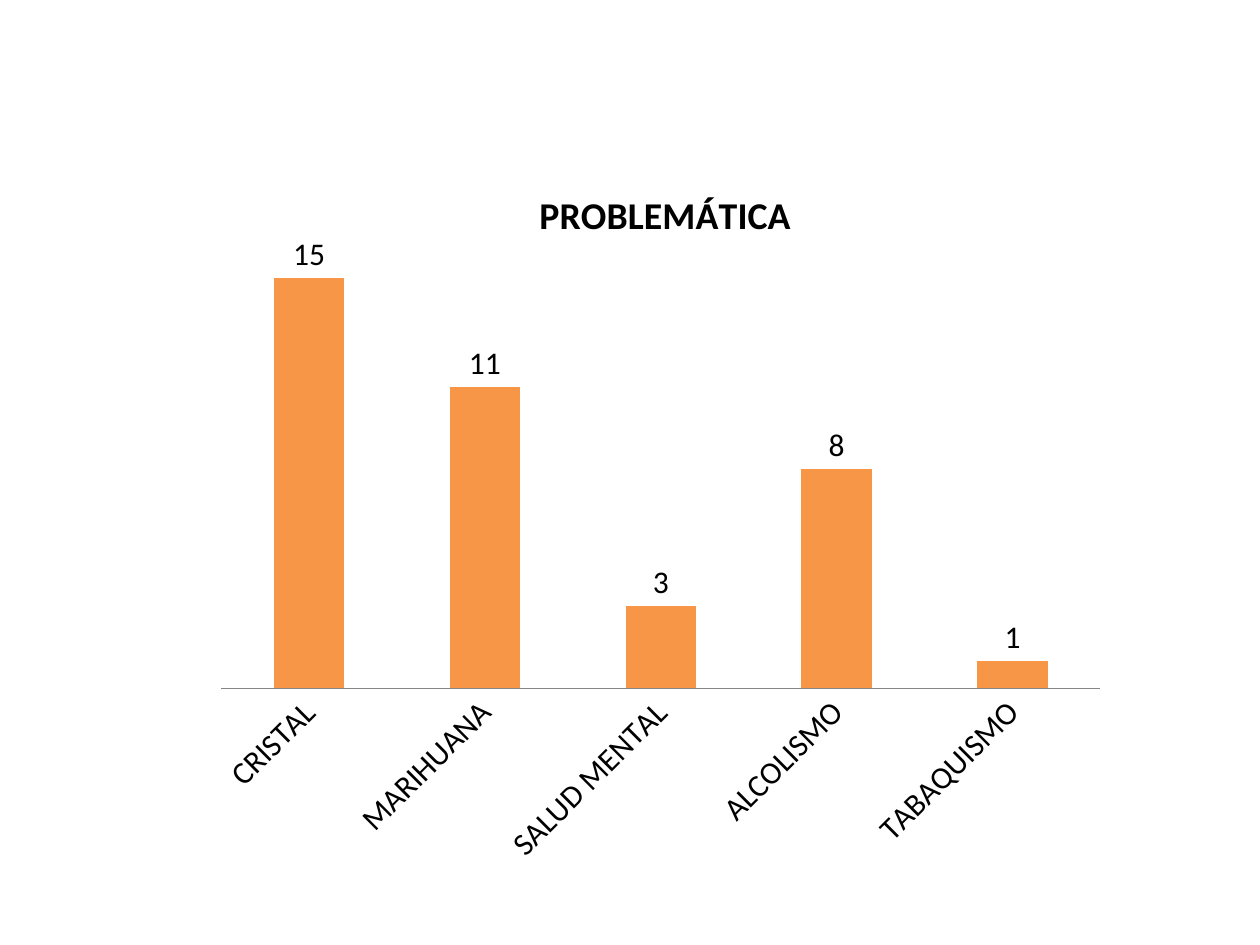
from lxml import etree
from pptx import Presentation
from pptx.chart.data import CategoryChartData
from pptx.dml.color import RGBColor
from pptx.enum.chart import XL_CHART_TYPE, XL_LABEL_POSITION, XL_TICK_MARK
from pptx.oxml.ns import qn
from pptx.util import Inches, Pt

COLUMNS = XL_CHART_TYPE.COLUMN_CLUSTERED
OUTSIDE_END = XL_LABEL_POSITION.OUTSIDE_END
NO_TICK = XL_TICK_MARK.NONE

COLORS = {"text": "000000", "bar": "F79646", "axis": "868686"}
HEADING = "PROBLEMÁTICA"
CASES = {
    "CRISTAL": 15,
    "MARIHUANA": 11,
    "SALUD MENTAL": 3,
    "ALCOLISMO": 8,
    "TABAQUISMO": 1,
}


def color(name):
    return RGBColor.from_string(COLORS[name])


def style_font(font, size, bold=False):
    for attribute, value in {"name": "Calibri", "size": Pt(size), "bold": bold}.items():
        setattr(font, attribute, value)
    font.color.rgb = color("text")


def set_layout(parent, index, settings):
    for old in parent.findall(qn("c:layout")):
        parent.remove(old)
    layout = etree.Element(qn("c:layout"))
    manual = etree.SubElement(layout, qn("c:manualLayout"))
    for tag, value in settings.items():
        etree.SubElement(manual, qn(f"c:{tag}")).set("val", str(value))
    parent.insert(index, layout)


def add_problem_chart(slide, left, top, width, height):
    cases = CategoryChartData()
    cases.categories = list(CASES)
    cases.add_series(HEADING, list(CASES.values()))
    chart = slide.shapes.add_chart(
        COLUMNS, Inches(left), Inches(top), Inches(width), Inches(height), cases
    ).chart
    style_font(chart.font, 18)
    chart.has_legend = False

    chart.has_title = True
    heading = chart.chart_title.text_frame
    heading.text = HEADING
    style_font(heading.paragraphs[0].runs[0].font, 21.6, bold=True)
    set_layout(chart.chart_title._element, 1,
               {"xMode": "edge", "yMode": "edge", "x": 0.36, "y": 0.05})
    set_layout(chart._chartSpace.chart.plotArea, 0,
               {"layoutTarget": "inner", "xMode": "edge", "yMode": "edge",
                "x": 0.02, "y": 0.144, "w": 0.96, "h": 0.596})

    problems = chart.category_axis
    problems.major_tick_mark = NO_TICK
    problems.format.line.color.rgb = color("axis")
    problems.format.line.width = Pt(0.75)
    problems.tick_labels.font.size = Pt(18)
    problems._element.find(qn("c:txPr")).find(qn("a:bodyPr")).set("rot", "-2700000")

    counts = chart.value_axis
    for attribute, value in {"visible": False, "has_major_gridlines": False,
                             "minimum_scale": 0, "maximum_scale": 16}.items():
        setattr(counts, attribute, value)

    columns = chart.plots[0]
    columns.gap_width = 150
    columns.vary_by_categories = False
    columns.has_data_labels = True
    columns.data_labels.show_value = True
    columns.data_labels.position = OUTSIDE_END
    style_font(columns.data_labels.font, 18)
    bars = columns.series[0].format.fill
    bars.solid()
    bars.fore_color.rgb = color("bar")


def main():
    deck = Presentation()
    deck.slide_width, deck.slide_height = Inches(10), Inches(7.5)
    slide = deck.slides.add_slide(deck.slide_layouts[6])
    add_problem_chart(slide, 1.61, 1.15, 7.27, 5.83)
    deck.save("out.pptx")


if __name__ == "__main__":
    main()
